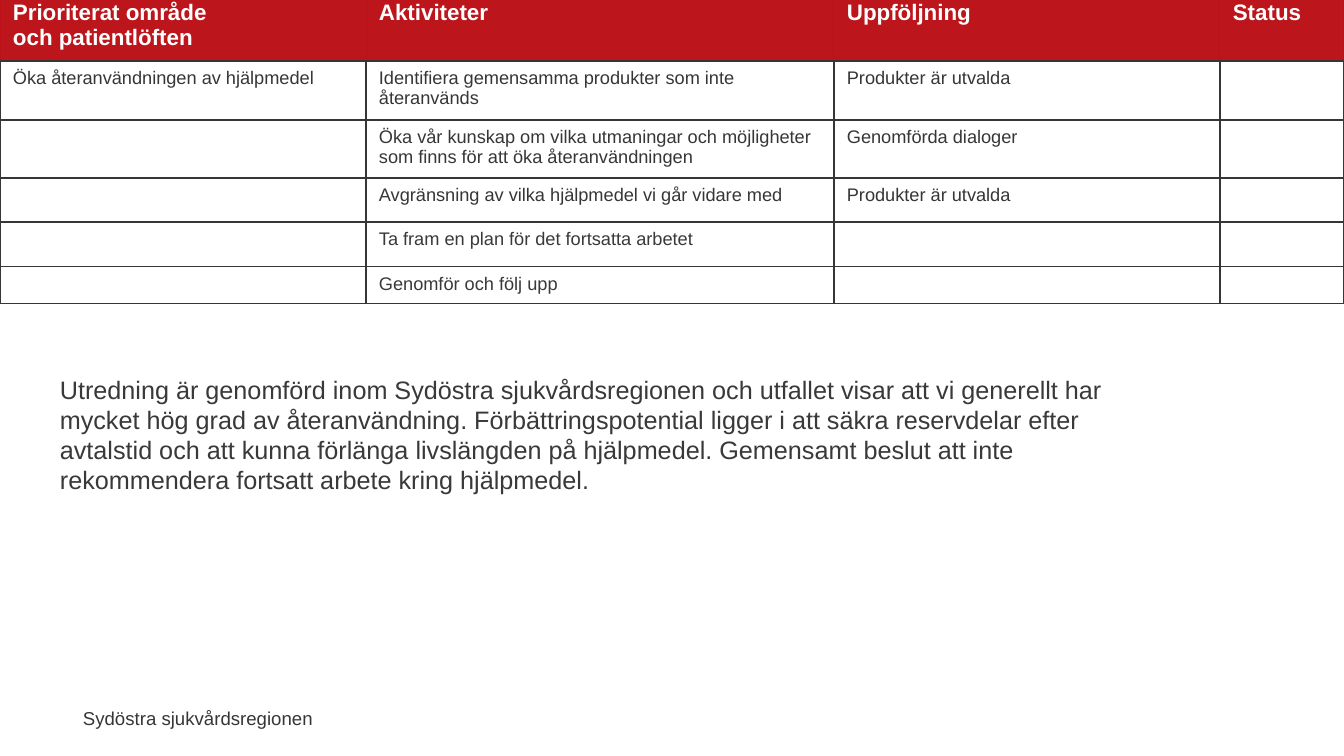
from pptx import Presentation
from pptx.dml.color import RGBColor
from pptx.enum.text import MSO_ANCHOR, PP_ALIGN
from pptx.oxml.ns import qn
from pptx.util import Emu, Pt
from lxml.etree import SubElement

PX = 12192000 / 1344
COLORS = {"red": "BC151B", "edge": "BC1018", "ink": "363636", "text": "393939", "white": "FFFFFF"}


def px(*lengths):
    return [Emu(round(length * PX)) for length in lengths]


def style(paragraph, size, color, bold=False):
    for run in paragraph.runs:
        run.font.name = "Arial"
        run.font.size = Pt(size)
        run.font.bold = bold
        run.font.color.rgb = RGBColor.from_string(COLORS[color])


prs = Presentation()
prs.slide_width, prs.slide_height = px(1344, 756)
slide = prs.slides.add_slide(prs.slide_layouts[6])

# Footer
footer = slide.shapes.add_textbox(*px(71, 702, 252, 33)).text_frame
footer.word_wrap = False
footer.vertical_anchor = MSO_ANCHOR.MIDDLE
footer.text = "Sydöstra sjukvårdsregionen"
footer.paragraphs[0].alignment = PP_ALIGN.RIGHT
style(footer.paragraphs[0], 13.3, "ink")

# Activity plan
plan_rows = [
    ("Prioriterat område\voch patientlöften", "Aktiviteter", "Uppföljning", "Status"),
    ("Öka återanvändningen av hjälpmedel",
     "Identifiera gemensamma produkter som inte återanvänds", "Produkter är utvalda", ""),
    ("", "Öka vår kunskap om vilka utmaningar och möjligheter som finns för att öka "
     "återanvändningen", "Genomförda dialoger", ""),
    ("", "Avgränsning av vilka hjälpmedel vi går vidare med", "Produkter är utvalda", ""),
    ("", "Ta fram en plan för det fortsatta arbetet", "", ""),
    ("", "Genomför och följ upp", "", ""),
]
column_widths = px(366, 468, 386, 124)
row_heights = px(68, 59, 58, 44, 45, 37)
plan = slide.shapes.add_table(len(plan_rows), len(column_widths), *px(0, -7, 1344, 311)).table
for column, width in zip(plan.columns, column_widths):
    column.width = width

for r, (row, height) in enumerate(zip(plan_rows, row_heights)):
    plan.rows[r].height = height
    header = r == 0
    size = 16 if header else 13
    for c, wording in enumerate(row):
        cell = plan.cell(r, c)
        cell.margin_left, cell.margin_right, cell.margin_top, cell.margin_bottom = px(13, 13, 7, 7)
        cell.text_frame.text = wording
        paragraph = cell.text_frame.paragraphs[0]
        style(paragraph, size, "white" if header else "text" if r > 3 else "ink", header)
        for line_break in paragraph._p.findall(qn("a:br")):
            SubElement(line_break, qn("a:rPr"), sz=str(size * 100))
        if not wording:
            SubElement(paragraph._p, qn("a:endParaRPr"), sz=str(size * 100))

        # Cell borders come before the fill
        cell_props = cell._tc.get_or_add_tcPr()
        for side in ("lnL", "lnR", "lnT", "lnB"):
            red_edge = header and side != "lnB"
            border = SubElement(cell_props, qn(f"a:{side}"), w=str(Pt(0.75 if red_edge else 1)))
            paint = SubElement(border, qn("a:solidFill"))
            SubElement(paint, qn("a:srgbClr"), val=COLORS["edge" if red_edge else "ink"])
        if header:
            cell.fill.solid()
            cell.fill.fore_color.rgb = RGBColor.from_string(COLORS["red"])
        else:
            cell.fill.background()

# Conclusion
conclusion = slide.shapes.add_textbox(*px(50, 369, 1098, 132)).text_frame
conclusion.word_wrap = True
conclusion.text = (
    "Utredning är genomförd inom Sydöstra sjukvårdsregionen och utfallet visar att vi generellt har "
    "mycket hög grad av återanvändning. Förbättringspotential ligger i att säkra reservdelar efter "
    "avtalstid och att kunna förlänga livslängden på hjälpmedel. Gemensamt beslut att inte "
    "rekommendera fortsatt arbete kring hjälpmedel."
)
style(conclusion.paragraphs[0], 18, "text")

prs.save("out.pptx")
